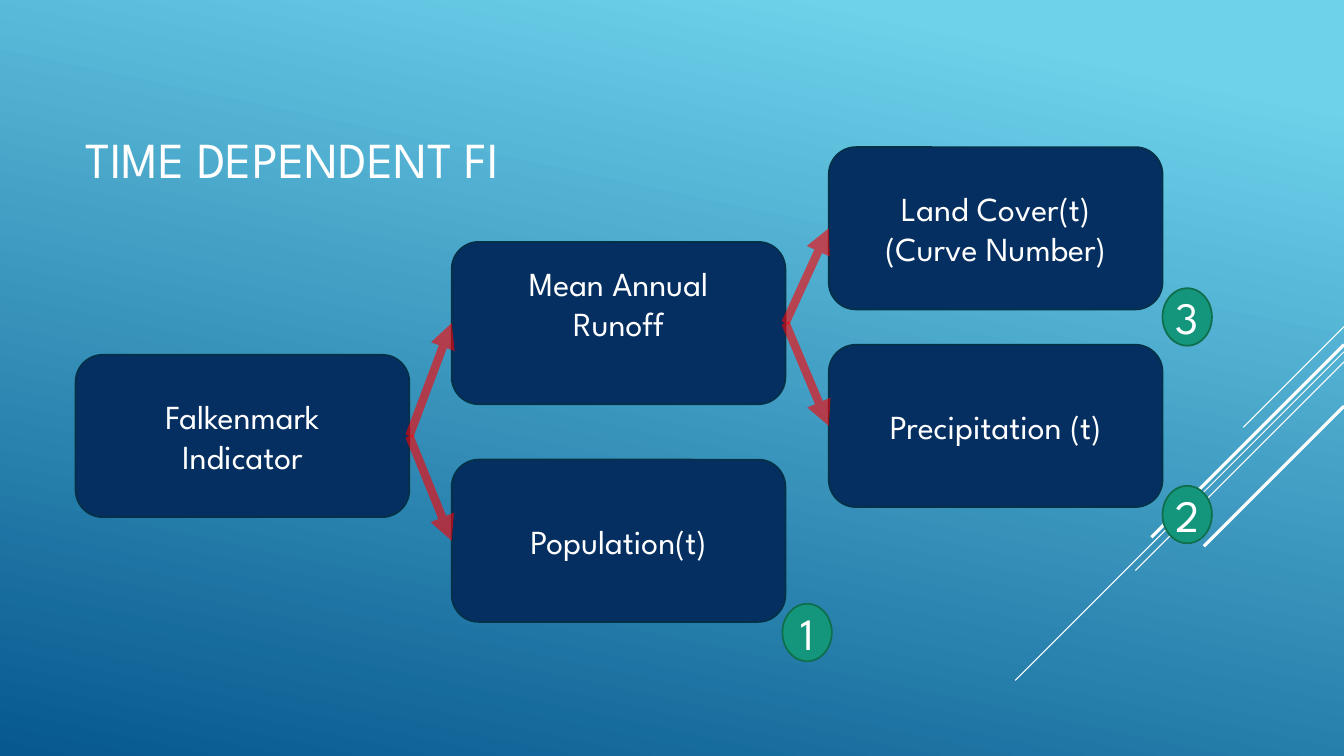
"""Builds the slide on the time dependent Falkenmark Indicator."""
import lxml.etree
import pptx
import pptx.dml.color
import pptx.enum.shapes
import pptx.enum.text
import pptx.oxml.ns
import pptx.util
from pptx.util import Inches

FONT = "League Spartan"
COLORS = {
    "sky": "6ED2EB",
    "deep": "06588E",
    "white": "FFFFFF",
    "box": "052F61",
    "box_line": "043148",
    "badge": "14967C",
    "badge_line": "0F6F4C",
    "arrow": "FF0000",
}
BOX_WIDTH, BOX_HEIGHT = 3.31, 1.61
BADGE_WIDTH, BADGE_HEIGHT = 0.49, 0.57
RIGHT_EDGE = 13.33
STRIPES = [
    (3.24, 1.0, 0.75),
    (3.49, 3.26, 0.75),
    (3.59, 2.07, 0.75),
    (3.42, 1.91, 2.25),
    (4.03, 1.39, 2.25),
]
BOXES = {
    "indicator": (0.75, 3.52, ["Falkenmark", "Indicator"], 0),
    "runoff": (4.48, 2.4, ["Mean Annual Runoff"], 0.4),
    "population": (4.48, 4.56, ["Population(t)"], 0),
    "land": (8.22, 1.46, ["Land Cover(t)", "(Curve Number)"], 0),
    "precipitation": (8.22, 3.42, ["Precipitation (t)"], 0),
}
ARROWS = [
    ("indicator", "runoff"),
    ("indicator", "population"),
    ("runoff", "land"),
    ("runoff", "precipitation"),
]
BADGES = [("1", 7.76, 5.99), ("2", 11.53, 4.82), ("3", 11.53, 2.86)]


def rgb(name):
    return pptx.dml.color.RGBColor.from_string(COLORS[name])


def add_child(parent, tag, **attributes):
    return lxml.etree.SubElement(parent, pptx.oxml.ns.qn(tag), attributes)


def paint_background(slide):
    fill = slide.background.fill
    fill.gradient()
    fill.gradient_angle = 360 - 102
    for stop, name, position in zip(fill.gradient_stops, ("sky", "deep"), (0.1, 1)):
        stop.color.rgb = rgb(name)
        stop.position = position


def write(frame, lines, size, align):
    frame.vertical_anchor = pptx.enum.text.MSO_ANCHOR.MIDDLE
    for index, line in enumerate(lines):
        paragraph = frame.paragraphs[0] if index == 0 else frame.add_paragraph()
        paragraph.alignment = align
        run = paragraph.add_run()
        run.text = line
        run.font.name = FONT
        run.font.size = pptx.util.Pt(size)
        run.font.color.rgb = rgb("white")


def add_title(slide, text):
    box = slide.shapes.add_textbox(Inches(0.75), Inches(0.75), Inches(9.33), Inches(1.65))
    box.text_frame.word_wrap = True
    write(box.text_frame, [text], 36, pptx.enum.text.PP_ALIGN.LEFT)


def add_line(slide, start, end, color, width):
    connector = slide.shapes.add_connector(
        pptx.enum.shapes.MSO_CONNECTOR.STRAIGHT,
        *(Inches(value) for value in start + end),
    )
    connector.line.color.rgb = rgb(color)
    connector.line.width = pptx.util.Pt(width)
    add_child(connector.element.spPr, "a:effectLst")
    return connector


def add_arrow(slide, source, target):
    connector = add_line(slide, (0, 0), (1, 1), "arrow", 6)
    connector.begin_connect(source, 3)
    connector.end_connect(target, 1)
    line = connector.element.spPr.find(pptx.oxml.ns.qn("a:ln"))
    color = line.find(".//" + pptx.oxml.ns.qn("a:srgbClr"))
    add_child(color, "a:alpha", val="60000")
    add_child(line, "a:tailEnd", type="triangle")


def add_labelled_shape(slide, kind, bounds, color, lines, size, side=0, bottom=0):
    shape = slide.shapes.add_shape(kind, *(Inches(value) for value in bounds))
    shape.shadow.inherit = False
    shape.fill.solid()
    shape.fill.fore_color.rgb = rgb(color)
    shape.line.color.rgb = rgb(color + "_line")
    shape.line.width = pptx.util.Pt(1.25)
    frame = shape.text_frame
    frame.margin_left = frame.margin_right = Inches(side)
    frame.margin_top, frame.margin_bottom = 0, Inches(bottom)
    frame.word_wrap = side > 0
    write(frame, lines, size, pptx.enum.text.PP_ALIGN.CENTER)
    return shape


def main():
    presentation = pptx.Presentation()
    presentation.slide_width = Inches(RIGHT_EDGE)
    presentation.slide_height = Inches(7.5)
    slide = presentation.slides.add_slide(presentation.slide_layouts[6])
    paint_background(slide)
    for top, reach, width in STRIPES:
        add_line(slide, (RIGHT_EDGE, top), (RIGHT_EDGE - reach, top + reach), "white", width)
    add_title(slide, "TIME DEPENDENT FI")

    shapes = pptx.enum.shapes.MSO_SHAPE
    boxes = {}
    for name, (left, top, lines, bottom) in BOXES.items():
        bounds = (left, top, BOX_WIDTH, BOX_HEIGHT)
        boxes[name] = add_labelled_shape(
            slide, shapes.ROUNDED_RECTANGLE, bounds, "box", lines, 24, 0.4, bottom
        )
    for source, target in ARROWS:
        add_arrow(slide, boxes[source], boxes[target])
    for number, left, top in BADGES:
        bounds = (left, top, BADGE_WIDTH, BADGE_HEIGHT)
        add_labelled_shape(slide, shapes.OVAL, bounds, "badge", [number], 32)
    presentation.save("out.pptx")


if __name__ == "__main__":
    main()
